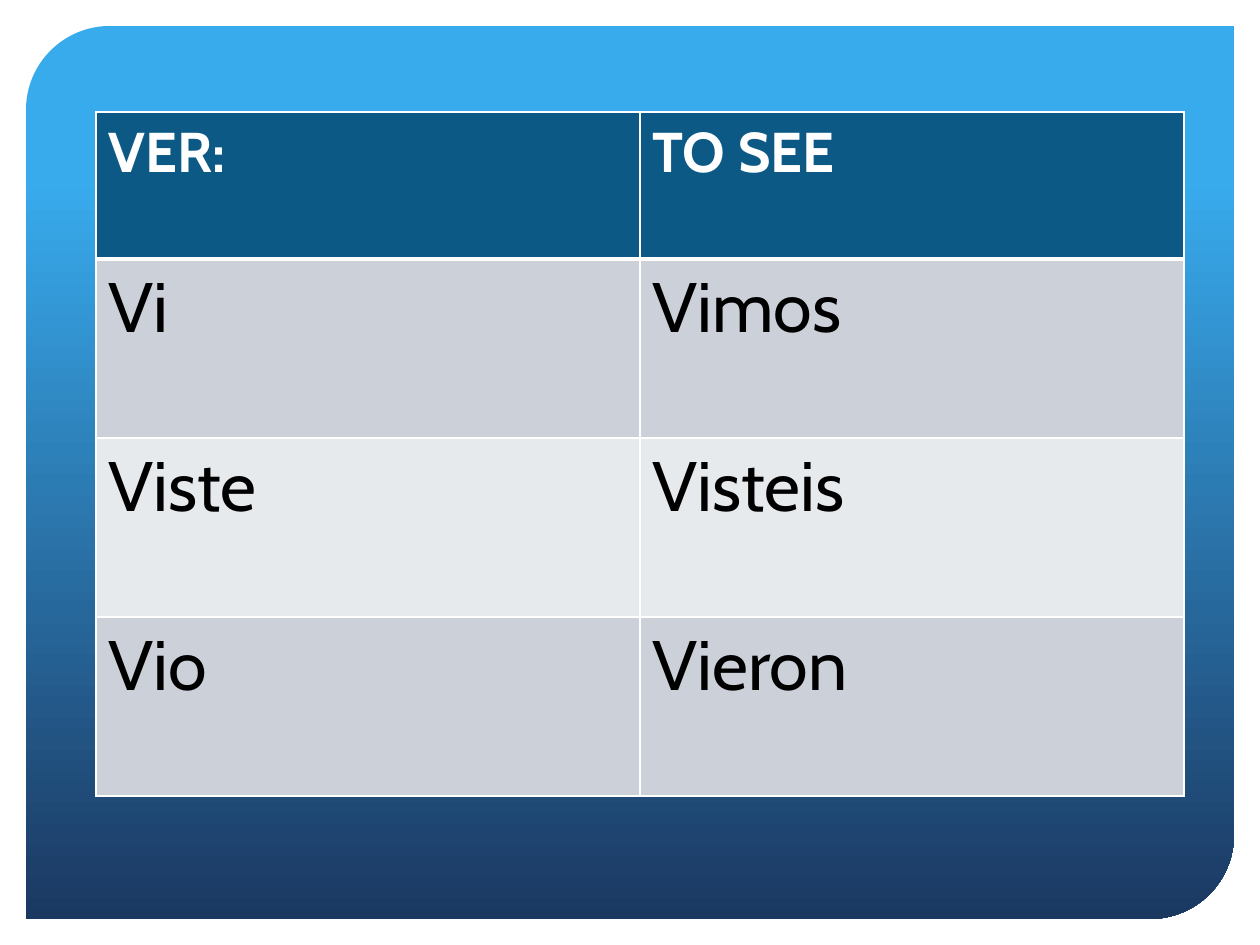
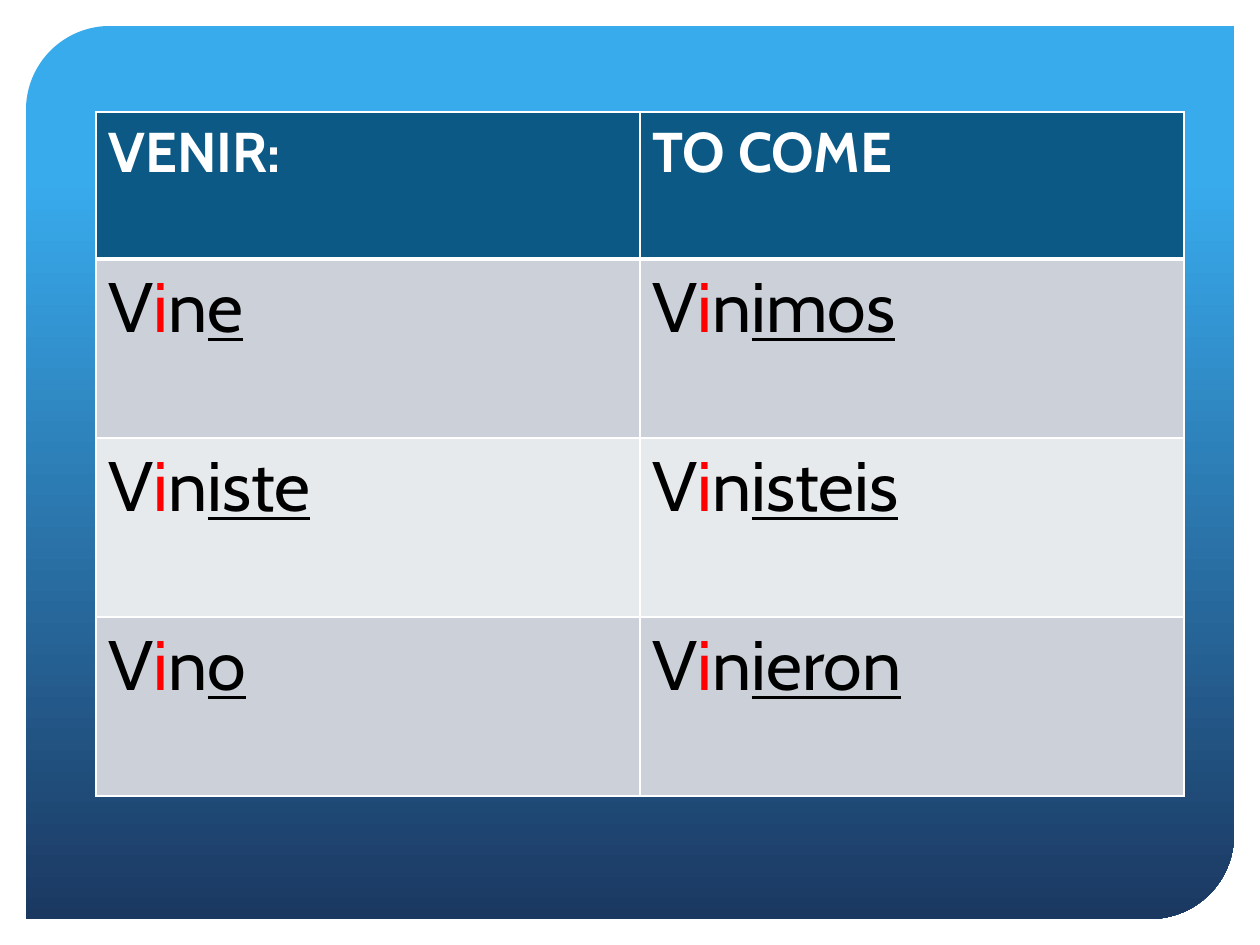
import pptx
import pptx.dml.color
import pptx.enum.shapes
import pptx.oxml
import pptx.oxml.ns
import pptx.util

RGBColor = pptx.dml.color.RGBColor
WHITE = RGBColor(0xFF, 0xFF, 0xFF)
BLACK = RGBColor(0, 0, 0)
RED = RGBColor(0xFF, 0, 0)
SKY = RGBColor(0x38, 0xAB, 0xED)
NAVY = RGBColor(0x1B, 0x38, 0x61)
HEADER = RGBColor(0x0C, 0x59, 0x86)
BANDS = (RGBColor(0xCC, 0xD1, 0xD9), RGBColor(0xE7, 0xEA, 0xED))
FONT = "Cabin"
PX_PER_INCH = 126


def px(n):
    return pptx.util.Emu(round(n * 914400 / PX_PER_INCH))


class Deck:
    def __init__(self):
        self.prs = pptx.Presentation()
        self.prs.slide_width = px(1260)
        self.prs.slide_height = px(945)
        self.s = None

    def slide(self):
        self.s = self.prs.slides.add_slide(self.prs.slide_layouts[6])
        self.s.background.fill.solid()
        self.s.background.fill.fore_color.rgb = WHITE
        self.panel(26, 26, 1208, 893)

    def panel(self, x, y, w, h):
        shape = pptx.enum.shapes.MSO_SHAPE.ROUND_2_DIAG_RECTANGLE
        sp = self.s.shapes.add_shape(shape, px(x), px(y), px(w), px(h))
        sp.adjustments[0] = 0.094
        sp.adjustments[1] = 0
        sp.shadow.inherit = False
        sp.line.fill.background()
        sp.fill.gradient()
        sp.fill.gradient_angle = 270
        stops = sp.fill.gradient_stops
        for stop, position, color in zip(stops, (0.17, 1), (SKY, NAVY)):
            stop.position = position
            stop.color.rgb = color

    def borders(self, cell, top, bottom):
        tcPr = cell._tc.get_or_add_tcPr()
        for side, width in (("L", 1), ("R", 1), ("T", top), ("B", bottom)):
            tcPr.append(pptx.oxml.parse_xml(
                f'<a:ln{side} {pptx.oxml.ns.nsdecls("a")} w="{pptx.util.Pt(width)}">'
                f'<a:solidFill><a:srgbClr val="{WHITE}"/></a:solidFill></a:ln{side}>'))

    def cell(self, cell, parts, row):
        self.borders(cell, 3 if row == 1 else 1, 3 if row == 0 else 1)
        cell.fill.solid()
        cell.fill.fore_color.rgb = BANDS[(row - 1) % 2] if row else HEADER
        p = cell.text_frame.paragraphs[0]
        for text, color, underline in parts:
            r = p.add_run()
            r.text = text
            r.font.name = FONT
            r.font.size = pptx.util.Pt(40 if row else 32)
            r.font.bold = row == 0
            r.font.underline = underline
            r.font.color.rgb = color

    def table(self, x, y, col_width, row_heights, rows):
        cols = len(rows[0])
        frame = self.s.shapes.add_table(len(rows), cols, px(x), px(y),
                                        px(col_width * cols), px(sum(row_heights)))
        table = frame.table
        for column in table.columns:
            column.width = px(col_width)
        for i, (height, row) in enumerate(zip(row_heights, rows)):
            table.rows[i].height = px(height)
            for j, parts in enumerate(row):
                self.cell(table.cell(i, j), parts, i)

    def conjugation(self, verb, meaning, forms):
        self.slide()
        heading = [[(text, WHITE, False)] for text in (verb, meaning)]
        self.table(96, 112, 544, (147, 179, 179, 179), [heading] + forms)


def regular(form):
    return [(form, BLACK, False)]


def stem_change(ending):
    return [("V", BLACK, False), ("i", RED, False), ("n", BLACK, False),
            (ending, BLACK, True)]


def grid(style, rows):
    return [[style(text) for text in row] for row in rows]


def main():
    deck = Deck()
    deck.conjugation("VER:", "TO SEE", grid(regular, [
        ("Vi", "Vimos"), ("Viste", "Visteis"), ("Vio", "Vieron")]))
    deck.conjugation("VENIR:", "TO COME", grid(stem_change, [
        ("e", "imos"), ("iste", "isteis"), ("o", "ieron")]))
    deck.prs.save("out.pptx")


if __name__ == "__main__":
    main()
